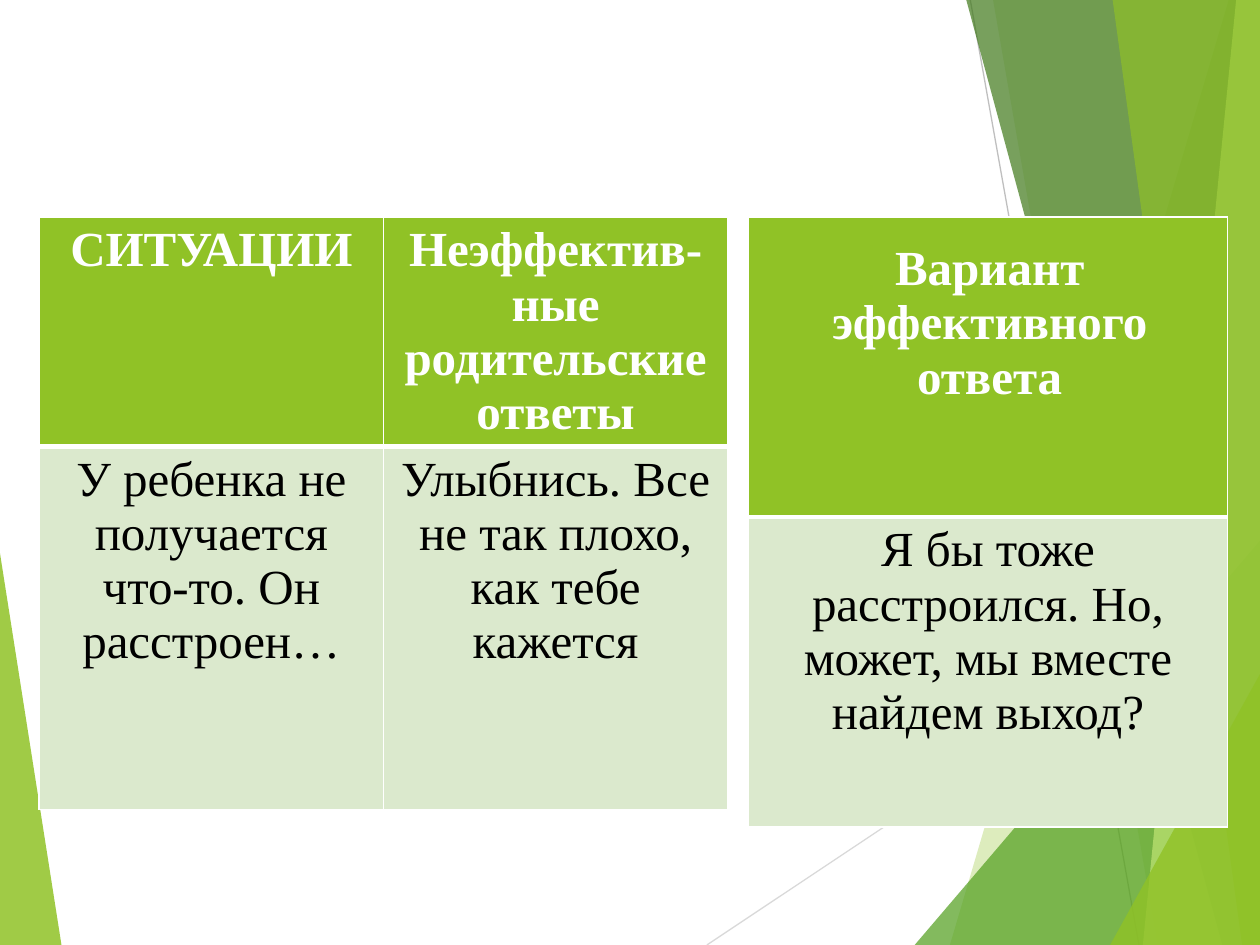
from lxml.etree import SubElement
from pptx import Presentation
from pptx.dml.color import RGBColor
from pptx.enum.shapes import MSO_CONNECTOR as Connector
from pptx.enum.text import PP_ALIGN as Align
from pptx.oxml.ns import qn
from pptx.util import Cm, Pt

WHITE = RGBColor(0xFF, 0xFF, 0xFF)
BLACK = RGBColor(0, 0, 0)
LIME = RGBColor(0x90, 0xC2, 0x26)
PALE_LIME = RGBColor(0xC0, 0xE4, 0x74)
GREEN = RGBColor(0x54, 0xA0, 0x21)
DARK_GREEN = RGBColor(0x3F, 0x78, 0x19)
MINT = RGBColor(0xDB, 0xE9, 0xCD)
LIGHT_GREY = RGBColor(0xD9, 0xD9, 0xD9)
GREY = RGBColor(0xBF, 0xBF, 0xBF)

# All lengths are in centimetres
WIDTH, HEIGHT = 25.4, 19.05

LEFT_FACET = ([(0, 11.15), (1.24, HEIGHT), (0, HEIGHT)], LIME, 85)
RAYS = [
    ((14.25, HEIGHT), (WIDTH, 11.62), LIGHT_GREY),
    ((19.56, 0), (22.96, HEIGHT), GREY),
]
# Facets reaching the right edge: upper left point, lower left x, colour, opacity %
RIGHT_FACETS = [
    ((24.77, 0), 19.15, LIME, 30),
    ((20.02, 0), 23.34, LIME, 20),
    ((WIDTH, 10.9), 18.44, GREEN, 72),
    ((19.48, 0), 24.64, DARK_GREEN, 70),
    ((24.92, 0), 23.04, PALE_LIME, 70),
    ((22.43, 0), 25.04, LIME, 65),
    ((WIDTH, 13.59), 22.38, LIME, 80),
]

TABLES = [
    dict(corner=(0.79, 4.37), columns=[6.94, 6.94], heights=[4.62, 7.32], ruled=True, rows=[
        ["СИТУАЦИИ", "Неэффектив-ные родительские ответы"],
        ["У ребенка не получается что-то. Он расстроен…",
         "Улыбнись. Все не так плохо, как тебе кажется"],
    ]),
    dict(corner=(15.09, 4.37), columns=[9.65], heights=[6.05, 6.25], ruled=True, rows=[
        [""],
        ["Я бы тоже расстроился. Но, может, мы вместе найдем выход?"],
    ]),
    dict(corner=(15.29, 4.75), columns=[9.32], heights=[3.5], ruled=False, rows=[
        ["Вариант эффективного ответа"],
    ]),
]
HEADER = dict(fill=LIME, color=WHITE, bold=True)
BODY = dict(fill=MINT, color=BLACK, bold=False)


def add_facet(shapes, points, color, opacity):
    corners = [(Cm(x), Cm(y)) for x, y in points]
    builder = shapes.build_freeform(*corners[0])
    builder.add_line_segments(corners[1:], close=True)
    facet = builder.convert_to_shape()
    facet.shadow.inherit = False
    facet.fill.solid()
    facet.fill.fore_color.rgb = color
    facet.line.fill.background()
    tint = facet.fill._xPr.find(qn("a:solidFill"))[0]
    SubElement(tint, qn("a:alpha"), val=str(opacity * 1000))


def add_ray(shapes, start, end, color):
    ray = shapes.add_connector(Connector.STRAIGHT, *map(Cm, start + end))
    ray.line.color.rgb = color
    ray.line.width = Pt(0.75)
    SubElement(ray._element.spPr, qn("a:effectLst"))


def set_borders(cell, widths):
    """Draw white borders; widths maps L, R, T, B to points, 0 meaning no line."""
    properties = cell._tc.get_or_add_tcPr()
    for side, width in widths.items():
        border = SubElement(properties, qn(f"a:ln{side}"), w=str(Pt(width)))
        if width:
            paint = SubElement(border, qn("a:solidFill"))
            SubElement(paint, qn("a:srgbClr"), val=str(WHITE))
        else:
            SubElement(border, qn("a:noFill"))


def fill_cell(cell, text, look, borders):
    set_borders(cell, borders)
    cell.fill.solid()
    cell.fill.fore_color.rgb = look["fill"]
    cell.text = text
    paragraph = cell.text_frame.paragraphs[0]
    paragraph.alignment = Align.CENTER
    font_format = dict(name="Times New Roman", size=Pt(28), bold=look["bold"])
    for run in paragraph.runs:
        for attribute, value in font_format.items():
            setattr(run.font, attribute, value)
        run.font.color.rgb = look["color"]


def add_answers(shapes, corner, columns, heights, ruled, rows):
    size = (sum(columns), sum(heights))
    table = shapes.add_table(len(rows), len(columns), *map(Cm, corner + size)).table
    for column, width in zip(table.columns, columns):
        column.width = Cm(width)
    for r, (texts, height) in enumerate(zip(rows, heights)):
        table.rows[r].height = Cm(height)
        thin = 1 if ruled else 0
        borders = dict.fromkeys("LRTB", thin)
        if ruled:
            borders["T" if r else "B"] = 3
        for c, text in enumerate(texts):
            fill_cell(table.cell(r, c), text, BODY if r else HEADER, borders)


def main():
    deck = Presentation()
    deck.slide_width, deck.slide_height = Cm(WIDTH), Cm(HEIGHT)
    shapes = deck.slides.add_slide(deck.slide_layouts[6]).shapes

    add_facet(shapes, *LEFT_FACET)
    for ray in RAYS:
        add_ray(shapes, *ray)
    for top, bottom_x, color, opacity in RIGHT_FACETS:
        points = [top, (bottom_x, HEIGHT), (WIDTH, HEIGHT)]
        if top[0] < WIDTH:
            points.append((WIDTH, 0))
        add_facet(shapes, points, color, opacity)
    for answers in TABLES:
        add_answers(shapes, **answers)

    deck.save("out.pptx")


if __name__ == "__main__":
    main()
